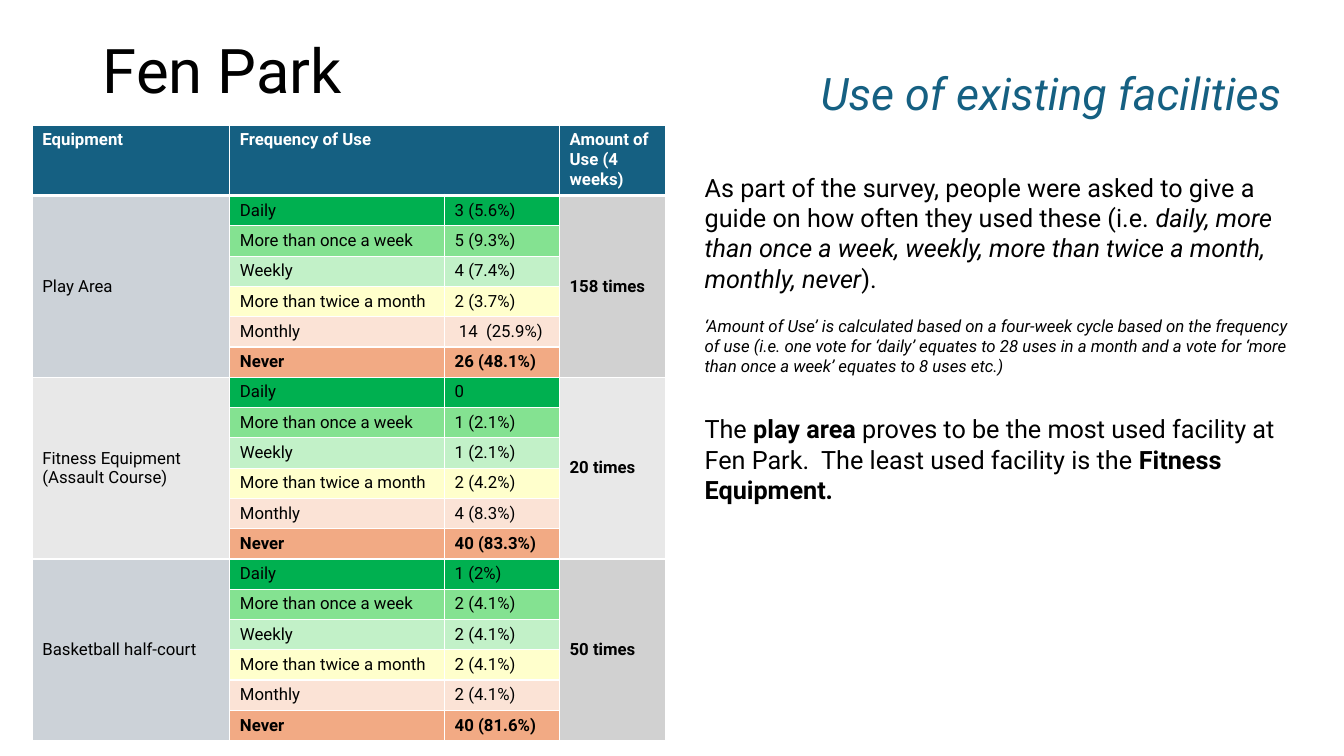
from pptx import Presentation
from pptx.dml.color import RGBColor
from pptx.enum.text import MSO_ANCHOR
from pptx.oxml import parse_xml
from pptx.oxml.ns import nsdecls
from pptx.util import Pt

EMU_PER_PX = 9144
FONT = "Roboto"
MIDDLE = MSO_ANCHOR.MIDDLE
TOP = MSO_ANCHOR.TOP

BLACK = RGBColor(0x00, 0x00, 0x00)
WHITE = RGBColor(0xFF, 0xFF, 0xFF)
BLUE = RGBColor(0x15, 0x60, 0x82)
BLUE_GREY = RGBColor(0xCC, 0xD2, 0xD8)
MID_GREY = RGBColor(0xD1, 0xD1, 0xD1)
LIGHT_GREY = RGBColor(0xE8, 0xE8, 0xE8)

FREQUENCIES = [
    ("Daily", RGBColor(0x00, 0xB0, 0x50)),
    ("More than once a week", RGBColor(0x84, 0xE2, 0x91)),
    ("Weekly", RGBColor(0xC2, 0xF1, 0xC8)),
    ("More than twice a month", RGBColor(0xFF, 0xFF, 0xCC)),
    ("Monthly", RGBColor(0xFB, 0xE3, 0xD6)),
    ("Never", RGBColor(0xF2, 0xAA, 0x84)),
]
FACILITIES = [
    ("Play Area", "158 times", BLUE_GREY, MID_GREY,
     ["3 (5.6%)", "5 (9.3%)", "4 (7.4%)", "2 (3.7%)", " 14  (25.9%)", "26 (48.1%)"]),
    ("Fitness Equipment (Assault Course)", "20 times", LIGHT_GREY, LIGHT_GREY,
     ["0", "1 (2.1%)", "1 (2.1%)", "2 (4.2%)", "4 (8.3%)", "40 (83.3%)"]),
    ("Basketball half-court", "50 times", BLUE_GREY, MID_GREY,
     ["1 (2%)", "2 (4.1%)", "2 (4.1%)", "2 (4.1%)", "2 (4.1%)", "40 (81.6%)"]),
]
COLUMN_WIDTHS = [196, 213, 114, 105]
HEADER_HEIGHT = 69
ROW_HEIGHT = 30


def px(n):
    return n * EMU_PER_PX


def set_font(p, size, color=BLACK, bold=None, italic=None):
    font = p.font
    font.name, font.size = FONT, Pt(size)
    font.color.rgb = color
    font.bold, font.italic = bold, italic


def add_text_box(s, x, y, w, h, anchor=TOP):
    tf = s.shapes.add_textbox(px(x), px(y), px(w), px(h)).text_frame
    tf.word_wrap = True
    tf.vertical_anchor = anchor
    return tf


def add_runs(p, runs):
    """Add (text, style) pairs, where style is "", "bold" or "italic"."""
    for text, style in runs:
        r = p.add_run()
        r.text = text
        if style:
            setattr(r.font, style, True)


def add_headings(s, x, y, w, h):
    title = add_text_box(s, x, y, w, h, MIDDLE).paragraphs[0]
    title.text = "Fen Park"
    title.line_spacing = 0.9
    set_font(title, 44)

    subtitle = add_text_box(s, x + 712, y + 60, 548, 64).paragraphs[0]
    subtitle.text = "Use of existing facilities"
    set_font(subtitle, 32, BLUE, italic=True)


def set_borders(cell, top, bottom):
    tcPr = cell._tc.get_or_add_tcPr()
    for side, width in (("L", 1), ("R", 1), ("T", top), ("B", bottom)):
        tcPr.append(parse_xml(
            f'<a:ln{side} {nsdecls("a")} w="{Pt(width)}"><a:solidFill>'
            f'<a:srgbClr val="{WHITE}"/></a:solidFill></a:ln{side}>'))


def fill_cell(cell, text, fill, color=BLACK, bold=False, anchor=TOP):
    cell.text = text
    cell.vertical_anchor = anchor
    cell.fill.solid()
    cell.fill.fore_color.rgb = fill
    set_font(cell.text_frame.paragraphs[0], 12, color, bold)


def add_usage_table(s, x, y):
    step = len(FREQUENCIES)
    rows = 1 + len(FACILITIES) * step
    height = HEADER_HEIGHT + (rows - 1) * ROW_HEIGHT
    table = s.shapes.add_table(rows, len(COLUMN_WIDTHS), px(x), px(y),
                               px(sum(COLUMN_WIDTHS)), px(height)).table
    table.horz_banding = False
    for column, width in zip(table.columns, COLUMN_WIDTHS):
        column.width = px(width)
    for i, row in enumerate(table.rows):
        row.height = px(ROW_HEIGHT if i else HEADER_HEIGHT)
        for cell in row.cells:
            set_borders(cell, 3 if i == 1 else 1, 1 if i else 3)

    table.cell(0, 1).merge(table.cell(0, 2))
    headers = [(0, "Equipment"), (1, "Frequency of Use"), (3, "Amount of Use (4 weeks)")]
    for col, text in headers:
        fill_cell(table.cell(0, col), text, BLUE, WHITE, bold=True)

    for i, (name, total, name_fill, total_fill, votes) in enumerate(FACILITIES):
        first = 1 + i * step
        for col in (0, 3):
            table.cell(first, col).merge(table.cell(first + step - 1, col))
        fill_cell(table.cell(first, 0), name, name_fill, anchor=MIDDLE)
        fill_cell(table.cell(first, 3), total, total_fill, bold=True, anchor=MIDDLE)
        for j, ((frequency, fill), vote) in enumerate(zip(FREQUENCIES, votes)):
            bold = frequency == "Never"
            fill_cell(table.cell(first + j, 1), frequency, fill, bold=bold)
            fill_cell(table.cell(first + j, 2), vote, fill, bold=bold)


def add_commentary(s, x, y, w, h):
    tf = add_text_box(s, x, y, w, h)
    survey = tf.paragraphs[0]
    add_runs(survey, [
        ("As part of the survey, people were asked to give a guide on how often "
         "they used these (i.e. ", ""),
        ("daily, more than once a week, weekly, more than twice a month, "
         "monthly, never", "italic"),
        (").", ""),
    ])
    finding = tf.add_paragraph()
    finding.space_before = Pt(86)
    add_runs(finding, [
        ("The ", ""),
        ("play area ", "bold"),
        ("proves to be the most used facility at Fen Park.  "
         "The least used facility is the ", ""),
        ("Fitness Equipment.", "bold"),
    ])
    for p in tf.paragraphs:
        set_font(p, 18)

    note = add_text_box(s, x, y + 142, w, 71).paragraphs[0]
    note.text = ("‘Amount of Use’ is calculated based on a four-week cycle based on "
                 "the frequency of use (i.e. one vote for ‘daily’ equates to 28 uses "
                 "in a month and a vote for ‘more than once a week’ equates to "
                 "8 uses etc.)")
    set_font(note, 12, italic=True)


def main():
    prs = Presentation()
    prs.slide_width, prs.slide_height = px(1333), px(750)
    s = prs.slides.add_slide(prs.slide_layouts[6])
    add_headings(s, 92, 0, 600, 145)
    add_usage_table(s, 32, 124)
    add_commentary(s, 689, 166, 612, 343)
    prs.save("out.pptx")


if __name__ == "__main__":
    main()
